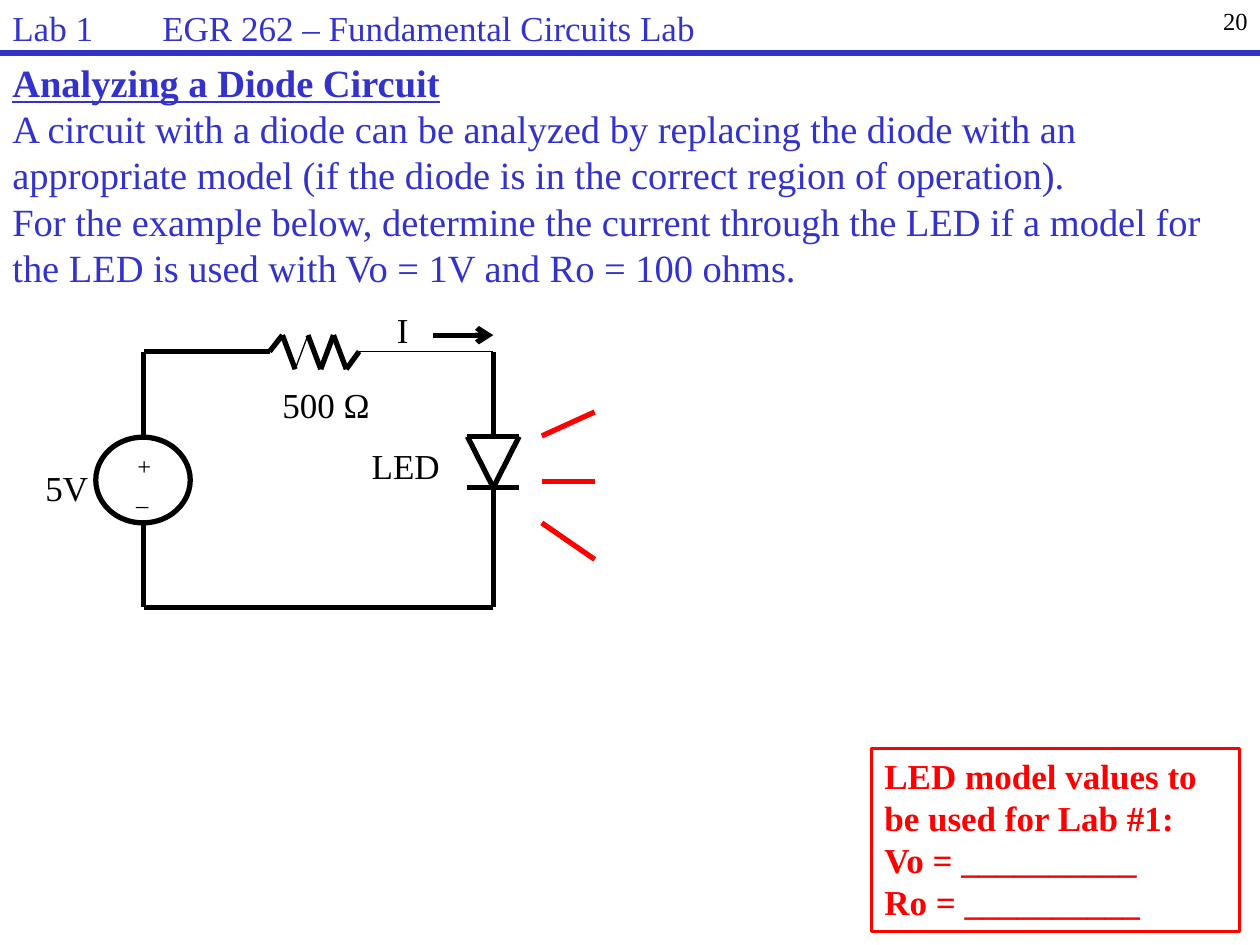
from dataclasses import dataclass

import pptx
import pptx.dml.color
import pptx.enum.shapes
import pptx.enum.text
import pptx.oxml
import pptx.oxml.ns
import pptx.util

# The slide is a grid of 100 columns by 75 rows
COLUMNS, ROWS = 100, 75
CELL = pptx.util.Inches(0.1)
FONT = "Times New Roman"
COLOURS = {"blue": "3333CC", "black": "000000", "red": "FF0000"}
THICK, THIN = 3, 0.75


@dataclass
class Wire:
    start: tuple[float, float]
    end: tuple[float, float]
    colour: str = "black"
    width: float = THICK
    arrow: bool = False


@dataclass
class Span:
    text: str
    size: float = 20
    colour: str = "black"
    bold: bool = False
    underline: bool = False


@dataclass
class Label:
    span: Span
    area: tuple[float, float, float, float]


def cells(count: float) -> int:
    return round(count * CELL)


def colour_of(name: str):
    return pptx.dml.color.RGBColor.from_string(COLOURS[name])


def draw_wire(shapes, wire: Wire) -> None:
    straight = pptx.enum.shapes.MSO_CONNECTOR.STRAIGHT
    line = shapes.add_connector(straight, *map(cells, wire.start + wire.end))
    line.line.color.rgb = colour_of(wire.colour)
    line.line.width = pptx.util.Pt(wire.width)
    if wire.arrow:
        pptx.oxml.ns.qn("a:tailEnd")
        head = pptx.oxml.parse_xml(
            f'<a:tailEnd {pptx.oxml.ns.nsdecls("a")} type="arrow"/>')
        line.line._get_or_add_ln().append(head)
    line._element.spPr.append(
        pptx.oxml.parse_xml(f'<a:effectLst {pptx.oxml.ns.nsdecls("a")}/>'))


def draw_outline(shapes, kind, area, colour: str, width: float):
    shape = shapes.add_shape(kind, *map(cells, area))
    shape.shadow.inherit = False
    shape.fill.background()
    shape.line.color.rgb = colour_of(colour)
    shape.line.width = pptx.util.Pt(width)
    return shape


def write(box, spans: list[Span], align="LEFT", wrap=True, grow=False) -> None:
    """Write each span as its own paragraph."""
    frame = box.text_frame
    frame.word_wrap = wrap
    frame.vertical_anchor = pptx.enum.text.MSO_ANCHOR.TOP
    if grow:
        frame.auto_size = pptx.enum.text.MSO_AUTO_SIZE.SHAPE_TO_FIT_TEXT
    for index, span in enumerate(spans):
        para = frame.add_paragraph() if index else frame.paragraphs[0]
        para.alignment = getattr(pptx.enum.text.PP_ALIGN, align)
        run = para.add_run()
        run.text = span.text
        run.font.name = FONT
        run.font.size = pptx.util.Pt(span.size)
        run.font.color.rgb = colour_of(span.colour)
        run.font.bold = span.bold
        run.font.underline = span.underline


def draw_label(shapes, label: Label) -> None:
    box = shapes.add_textbox(*map(cells, label.area))
    frame = box.text_frame
    frame.margin_left = frame.margin_right = 0
    frame.margin_top = frame.margin_bottom = 0
    write(box, [label.span], wrap=False, grow=True)


def resistor(left: float, right: float, middle: float) -> list[Wire]:
    """Zigzag of seven strokes between two wire ends."""
    heights = [middle] + [middle - 1.3, middle + 1.4] * 3 + [middle]
    pitch = (right - left) / (len(heights) - 1)
    points = [(left + step * pitch, y) for step, y in enumerate(heights)]
    return [Wire(start, end, width=THIN if step == 2 else THICK)
            for step, (start, end) in enumerate(zip(points, points[1:]))]


def draw_header(page) -> None:
    number = page.shapes.add_textbox(*map(cells, (79.2, 0, 20.8, 4.2)))
    write(number, [Span("20", 14)], align="RIGHT")
    draw_wire(page.shapes, Wire((0, 4.2), (COLUMNS, 4.2), "blue"))
    title = page.shapes.add_textbox(*map(cells, (0, 0, 73.3, 3.3)))
    write(title, [Span("Lab 1\tEGR 262 – Fundamental Circuits Lab", 20, "blue")])
    # Tab stop for the course name
    title.text_frame.paragraphs[0]._p.get_or_add_pPr().append(
        pptx.oxml.parse_xml(
            f'<a:tabLst {pptx.oxml.ns.nsdecls("a")}>'
            f'<a:tab pos="{cells(11.9)}" algn="l"/></a:tabLst>'))


def draw_circuit(page) -> None:
    shapes = page.shapes.add_group_shape().shapes
    left, right, top, bottom = 11.4, 39.15, 27.9, 48.2
    resistor_left, resistor_right = 21.4, 28.5
    diode_left, diode_right, anode, cathode = 37.1, 41.2, 34.65, 38.7
    source_top, source_bottom = 34.7, 41.5
    ray_left, ray_right = 43, 47.2
    tip = (right, cathode)

    wires = [
        # Loop
        Wire((left, top), (resistor_left, top)),
        *resistor(resistor_left, resistor_right, top),
        Wire((resistor_right, top), (right, top), width=THIN),
        Wire((right, top), (right, anode)),
        Wire(tip, (right, bottom)),
        Wire((left, top), (left, source_top)),
        Wire((left, source_bottom), (left, bottom)),
        Wire((left, bottom), (right, bottom)),
        # Diode
        Wire((diode_left, anode), (diode_right, anode)),
        Wire((diode_left, anode), tip),
        Wire((diode_right, anode), tip),
        Wire((diode_left, cathode), (diode_right, cathode)),
        # Current arrow
        Wire((34.4, 26.6), (right, 26.6), arrow=True),
    ]
    # Light rays
    wires += [Wire((ray_left, start), (ray_right, end), "red")
              for start, end in ((34.6, 32.7), (38.2, 38.2), (41.5, 44.4))]
    for wire in wires:
        draw_wire(shapes, wire)

    # Voltage source
    draw_outline(shapes, pptx.enum.shapes.MSO_SHAPE.OVAL,
                 (7.6, source_top, 7.5, source_bottom - source_top),
                 "black", THICK)

    labels = [
        Label(Span("LED"), (29.5, 35.3, 5.5, 3.4)),
        Label(Span("+", 14), (10.9, 35.8, 1.1, 2.3)),
        Label(Span("_", 14), (10.8, 38.2, 1, 2.3)),
        Label(Span("5V"), (3.6, 37, 3.4, 3.4)),
        Label(Span("500 Ω"), (22.4, 30.4, 7.1, 3.4)),
        Label(Span("I"), (31.5, 24.5, 0.9, 3.4)),
    ]
    for label in labels:
        draw_label(shapes, label)


def main() -> None:
    deck = pptx.Presentation()
    deck.slide_width, deck.slide_height = cells(COLUMNS), cells(ROWS)
    page = deck.slides.add_slide(deck.slide_layouts[6])

    # Problem statement
    body = page.shapes.add_textbox(*map(cells, (0, 4.2, COLUMNS, 19.5)))
    write(body, [
        Span("Analyzing a Diode Circuit", 22, "blue", True, True),
        Span("A circuit with a diode can be analyzed by replacing the diode "
             "with an appropriate model (if the diode is in the correct "
             "region of operation).", 22, "blue"),
        Span("For the example below, determine the current through the LED "
             "if a model for the LED is used with Vo = 1V and "
             "Ro = 100 ohms.", 22, "blue"),
    ], grow=True)

    draw_circuit(page)

    # Model values to fill in
    values = draw_outline(page.shapes, pptx.enum.shapes.MSO_SHAPE.RECTANGLE,
                          (69.2, 59.4, 29.2, 14.5), "red", 1.75)
    write(values, [Span(text, 20, "red", True) for text in (
        "LED model values to be used for Lab #1:",
        "Vo = __________", "Ro = __________")], grow=True)

    draw_header(page)
    deck.save("out.pptx")


if __name__ == "__main__":
    main()
